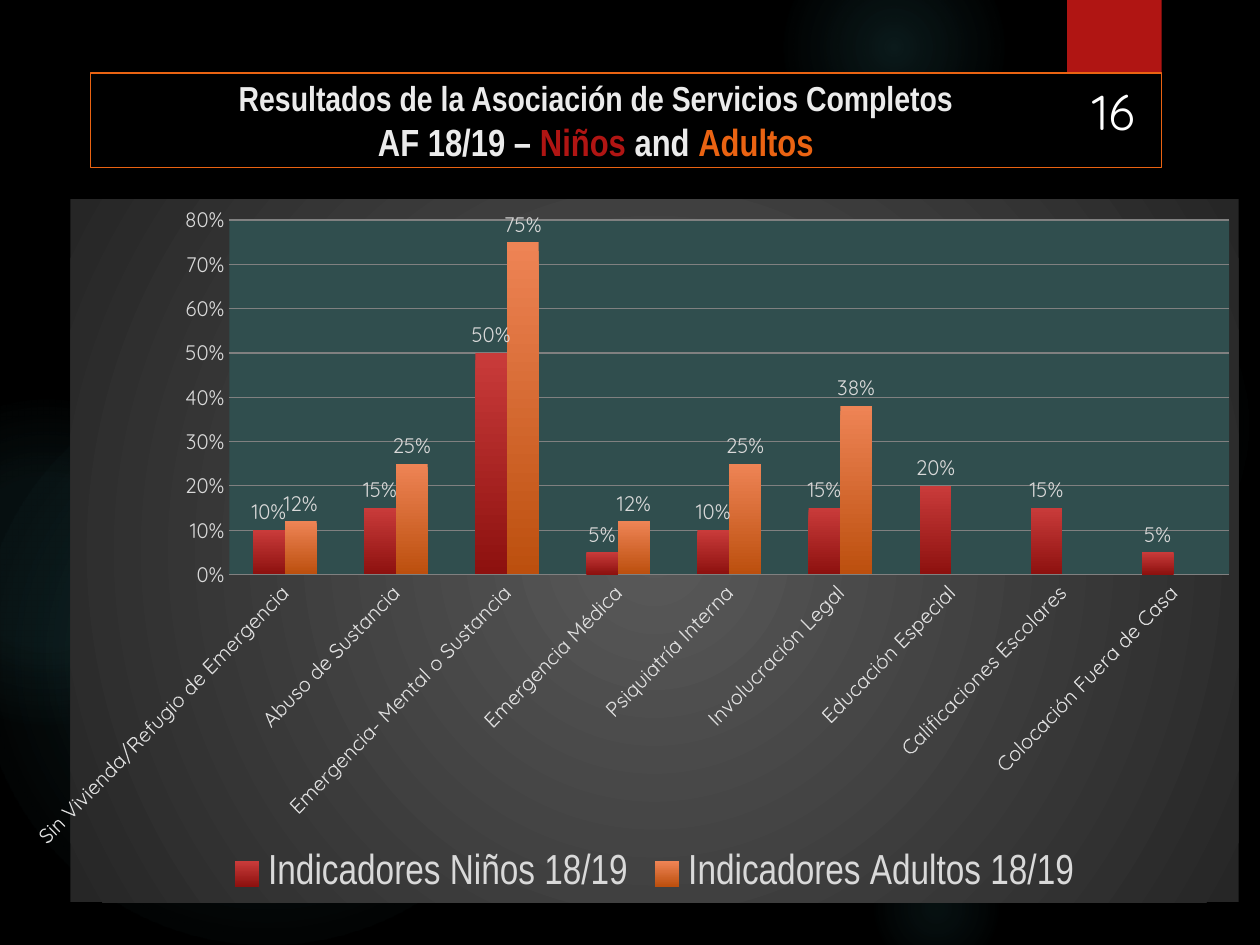
from dataclasses import dataclass

import pptx
import pptx.chart.data
import pptx.dml.color
import pptx.enum.chart
import pptx.enum.shapes
import pptx.enum.text
import pptx.oxml
import pptx.oxml.ns
import pptx.util
from pptx.util import Inches

qn = pptx.oxml.ns.qn
NS = pptx.oxml.ns.nsdecls("a", "c")


@dataclass(frozen=True)
class Theme:
    black: str = "000000"
    white: str = "FFFFFF"
    title: str = "EBEBEB"
    red: str = "B01513"
    orange: str = "EA6312"
    glow: str = "50B9C1"
    label: str = "D9D9D9"
    grid: str = "808080"
    plot: str = "304E4E"
    panel: tuple = ("595959", "262626")
    narrow: str = "Arial Narrow"
    round: str = "Quicksand"
    title_pt: float = 19.8
    subtitle_pt: float = 21.6
    number_pt: float = 28
    label_pt: float = 12
    legend_pt: float = 24


@dataclass(frozen=True)
class Glow:
    left: float
    top: float
    size: float
    stops: tuple  # (position %, opacity %)


@dataclass(frozen=True)
class Series:
    name: str
    values: tuple
    colors: tuple


T = Theme()

GLOWS = [
    Glow(6.89, 1.83, 3.08, ((0, 7), (36, 6), (69, 0))),
    Glow(6.22, -0.5, 1.75, ((0, 14), (36, 7), (73, 0))),
    Glow(6.89, 6.67, 1.08, ((0, 9), (36, 5), (66, 0))),
    Glow(-0.17, 2.92, 4.58, ((0, 11), (36, 10), (75, 0))),
    Glow(-0.92, 3.17, 2.58, ((0, 8), (36, 8), (72, 0))),
]
CATEGORIES = [
    "Sin Vivienda/Refugio de Emergencia", "Abuso de Sustancia",
    "Emergencia- Mental o Sustancia", "Emergencia Médica",
    "Psiquiatría Interna", "Involucración Legal", "Educación Especial",
    "Calificaciones Escolares", "Colocación Fuera de Casa",
]
SERIES = [
    Series("Indicadores Niños 18/19",
           (0.1, 0.15, 0.5, 0.05, 0.1, 0.15, 0.2, 0.15, 0.05), ("C93B3A", "8D110F")),
    Series("Indicadores Adultos 18/19",
           (0.12, 0.25, 0.75, 0.12, 0.25, 0.38, None, None, None), ("EE8455", "BC4F0E")),
]


def rgb(color: str):
    return pptx.dml.color.RGBColor.from_string(color)


def set_font(font, size: float, color: str, name: str, bold: bool = False) -> None:
    font.size, font.name, font.bold = pptx.util.Pt(size), name, bold
    font.color.rgb = rgb(color)


def gradient(stops, radial: bool) -> str:
    """Gradient fill from (position %, colour, opacity %) stops."""
    gs = "".join(
        f'<a:gs pos="{pos * 1000}"><a:srgbClr val="{color}">'
        f'<a:alpha val="{alpha * 1000}"/></a:srgbClr></a:gs>'
        for pos, color, alpha in stops)
    shade = ('<a:path path="circle"><a:fillToRect l="50000" t="50000" r="50000" b="50000"/></a:path>'
             if radial else '<a:lin ang="5400000" scaled="0"/>')
    return f'<a:gradFill {NS} rotWithShape="1"><a:gsLst>{gs}</a:gsLst>{shade}</a:gradFill>'


def two_tone(colors, radial: bool) -> str:
    return gradient([(0, colors[0], 100), (100, colors[1], 100)], radial)


def fill_gradient(fill, sp_pr, xml: str) -> None:
    fill.solid()
    sp_pr.replace(sp_pr.find(qn("a:solidFill")), pptx.oxml.parse_xml(xml))


def area_props(fill_xml: str):
    return pptx.oxml.parse_xml(
        f"<c:spPr {NS}>{fill_xml}<a:ln><a:noFill/></a:ln></c:spPr>")


def add_box(s, kind, left: float, top: float, width: float, height: float):
    sp = s.shapes.add_shape(kind, Inches(left), Inches(top), Inches(width), Inches(height))
    sp.shadow.inherit = False
    sp.line.fill.background()
    return sp


def add_glow(s, glow: Glow) -> None:
    sp = add_box(s, pptx.enum.shapes.MSO_SHAPE.OVAL, glow.left, glow.top, glow.size, glow.size)
    stops = [(pos, T.glow, alpha) for pos, alpha in glow.stops]
    fill_gradient(sp.fill, sp._element.spPr, gradient(stops, True))


def add_rect(s, left: float, top: float, width: float, height: float, color: str):
    sp = add_box(s, pptx.enum.shapes.MSO_SHAPE.RECTANGLE, left, top, width, height)
    sp.fill.solid()
    sp.fill.fore_color.rgb = rgb(color)
    return sp


def add_title(s) -> None:
    sp = add_rect(s, 0.72, 0.58, 8.5, 0.75, T.black)
    sp.line.color.rgb = rgb(T.orange)
    sp.line.width = pptx.util.Pt(0.75)
    tf = sp.text_frame
    tf.word_wrap = True
    tf.margin_right = Inches(0.58)
    tf.vertical_anchor = pptx.enum.text.MSO_ANCHOR.MIDDLE
    p = tf.paragraphs[0]
    p.alignment = pptx.enum.text.PP_ALIGN.CENTER
    r = p.add_run()
    r.text = "Resultados de la Asociación de Servicios Completos"
    set_font(r.font, T.title_pt, T.title, T.narrow, True)
    p.add_line_break()
    for text, color in [("AF 18/19 – ", T.title), ("Niños", T.red),
                        (" and ", T.title), ("Adultos", T.orange)]:
        r = p.add_run()
        r.text = text
        set_font(r.font, T.subtitle_pt, color, T.narrow, True)


def style_axis(axis) -> None:
    axis.major_tick_mark = axis.minor_tick_mark = pptx.enum.chart.XL_TICK_MARK.NONE
    axis.format.line.fill.background()
    set_font(axis.tick_labels.font, T.label_pt, T.label, T.round)


def add_chart(s) -> None:
    data = pptx.chart.data.CategoryChartData(number_format="0%")
    data.categories = CATEGORIES
    for series in SERIES:
        data.add_series(series.name, series.values)
    chart = s.shapes.add_chart(
        pptx.enum.chart.XL_CHART_TYPE.COLUMN_CLUSTERED,
        Inches(0.26), Inches(1.58), Inches(9.57), Inches(5.58), data).chart
    set_font(chart.font, 10, T.white, T.round)
    chart.has_title = False

    # Axes
    cat, val = chart.category_axis, chart.value_axis
    style_axis(cat)
    style_axis(val)
    cat._element.find(qn("c:txPr")).find(qn("a:bodyPr")).set("rot", "-2700000")
    val.minimum_scale, val.maximum_scale, val.major_unit = 0, 0.8, 0.1
    val.tick_labels.number_format = "0%"
    val.tick_labels.number_format_is_linked = False
    val.major_gridlines.format.line.color.rgb = rgb(T.grid)
    val.major_gridlines.format.line.width = pptx.util.Pt(0.75)

    # Columns and their labels
    plot = chart.plots[0]
    plot.gap_width, plot.overlap, plot.vary_by_categories = 150, 0, False
    for drawn, series in zip(plot.series, SERIES):
        fill = drawn.format.fill
        fill.solid()
        fill_gradient(fill, drawn._element.find(qn("c:spPr")), two_tone(series.colors, False))
        labels = drawn.data_labels
        labels.show_value = True
        labels.number_format, labels.number_format_is_linked = "0%", False
        labels.position = pptx.enum.chart.XL_LABEL_POSITION.OUTSIDE_END
        set_font(labels.font, T.label_pt, T.label, T.round)

    # Legend
    chart.has_legend = True
    chart.legend.position = pptx.enum.chart.XL_LEGEND_POSITION.BOTTOM
    chart.legend.include_in_layout = False
    set_font(chart.legend.font, T.legend_pt, T.label, T.narrow)

    # Panel, plot background and plot position
    space = chart._chartSpace
    space.find(qn("c:chart")).addnext(area_props(two_tone(T.panel, True)))
    area = space.find(qn("c:chart")).find(qn("c:plotArea"))
    area.append(area_props(f'<a:solidFill><a:srgbClr val="{T.plot}"/></a:solidFill>'))
    for old in area.findall(qn("c:layout")):
        area.remove(old)
    place = "".join(f'<c:{k} val="{v}"/>' for k, v in [
        ("layoutTarget", "inner"), ("xMode", "edge"), ("yMode", "edge"),
        ("x", 0.136), ("y", 0.03), ("w", 0.856), ("h", 0.504)])
    area.insert(0, pptx.oxml.parse_xml(
        f"<c:layout {NS}><c:manualLayout>{place}</c:manualLayout></c:layout>"))


def add_number(s) -> None:
    tf = s.shapes.add_textbox(Inches(8.49), Inches(0.32), Inches(0.69), Inches(0.84)).text_frame
    tf.word_wrap = True
    tf.vertical_anchor = pptx.enum.text.MSO_ANCHOR.BOTTOM
    p = tf.paragraphs[0]
    p.text = "16"
    p.alignment = pptx.enum.text.PP_ALIGN.CENTER
    set_font(p.runs[0].font, T.number_pt, T.white, T.round)


def main() -> None:
    prs = pptx.Presentation()
    prs.slide_width, prs.slide_height = Inches(10), Inches(7.5)
    s = prs.slides.add_slide(prs.slide_layouts[6])
    s.background.fill.solid()
    s.background.fill.fore_color.rgb = rgb(T.black)
    for glow in GLOWS:
        add_glow(s, glow)
    add_rect(s, 8.47, 0, 0.75, 1.2, T.red)
    add_title(s)
    add_chart(s)
    add_number(s)
    prs.save("out.pptx")


if __name__ == "__main__":
    main()
